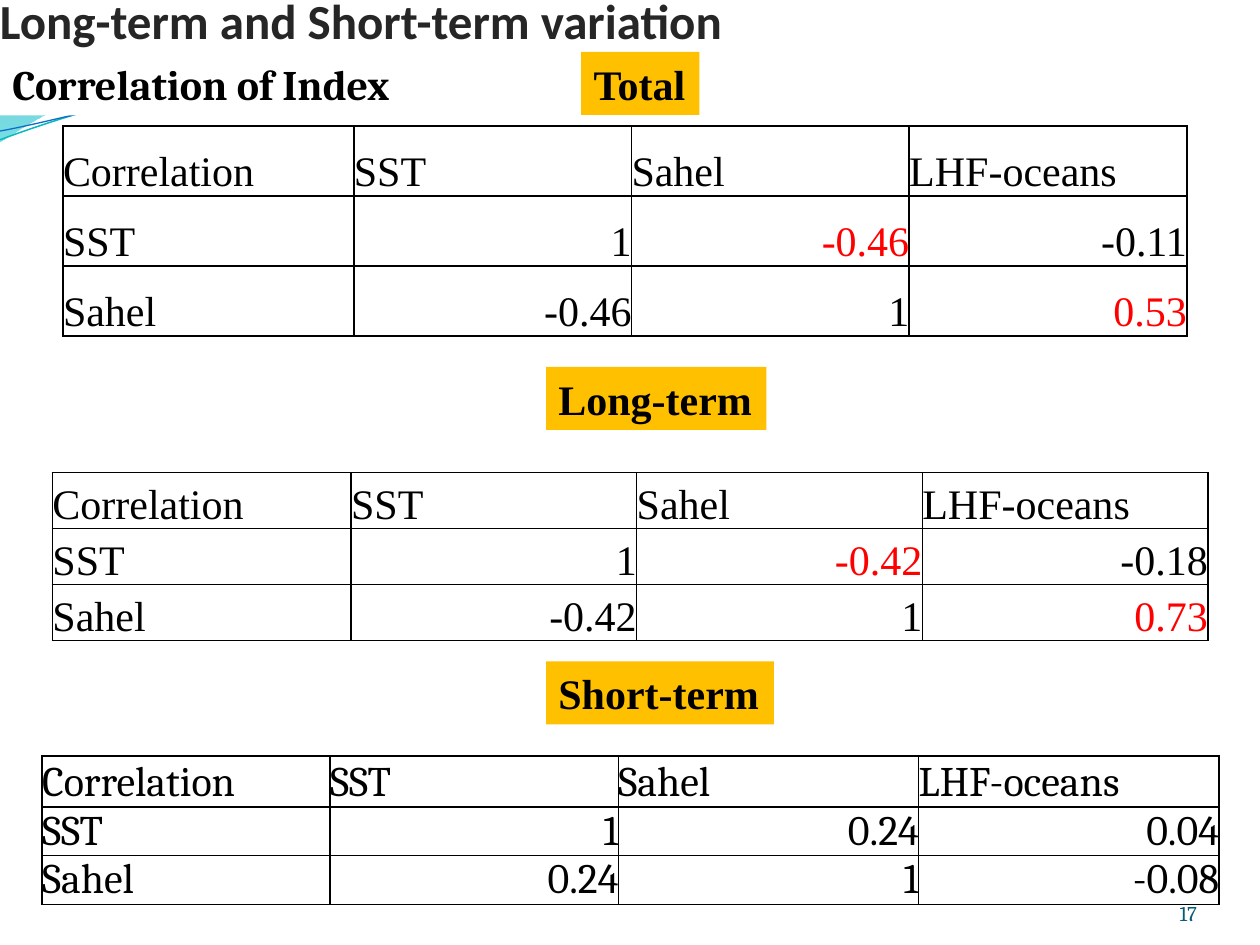
from dataclasses import dataclass

from lxml import etree
from pptx import Presentation
from pptx.dml.color import RGBColor
from pptx.enum.shapes import MSO_SHAPE
from pptx.enum.text import MSO_ANCHOR, MSO_AUTO_SIZE, PP_ALIGN
from pptx.oxml.ns import qn
from pptx.util import Emu, Inches, Pt

RECT = MSO_SHAPE.RECTANGLE
TOP, BOTTOM = MSO_ANCHOR.TOP, MSO_ANCHOR.BOTTOM
LEFT, RIGHT = PP_ALIGN.LEFT, PP_ALIGN.RIGHT
FIT = MSO_AUTO_SIZE.SHAPE_TO_FIT_TEXT

UNIT = Inches(1) / 12  # the slide is a grid of 120 columns by 90 rows
SERIF, TIMES, SANS = "Cambria", "Times New Roman", "Calibri"
BLACK, WHITE, RED, AMBER = "000000", "FFFFFF", "FF0000", "FFC000"
STRONG = 0.4
NAMES = ("Correlation", "SST", "Sahel", "LHF-oceans")


@dataclass
class Matrix:
    col: float
    row: float
    widths: tuple[float, ...]
    heights: tuple[float, ...]
    values: tuple[tuple[str, ...], ...]
    font: str = TIMES
    fill: str | None = None


@dataclass
class Label:
    text: str
    col: float
    row: float
    width: float
    font: str = TIMES
    fill: str = AMBER


@dataclass
class Band:
    """Steps are in inches: a pair is a point, six numbers are a cubic curve."""
    steps: tuple[tuple[float, ...], ...]
    colors: tuple[str, str]
    alphas: tuple[int, int]
    ends: tuple[int, int]


@dataclass
class Wave:
    steps: tuple[tuple[float, ...], ...]
    color: str
    weight: float


MATRICES = (
    Matrix(4, 72, (27.45, 27.45, 28.6, 28.6), (4.87, 4.63, 4.63),
           (("1", "0.24", "0.04"), ("0.24", "1", "-0.08")), SERIF, WHITE),
    Matrix(5, 45, (28.45, 27.2, 27.2, 27.2), (5.33,) * 3,
           (("1", "-0.42", "-0.18"), ("-0.42", "1", "0.73"))),
    Matrix(6, 12, (27.7, 26.45, 26.45, 26.45), (6.67,) * 3,
           (("1", "-0.46", "-0.11"), ("-0.46", "1", "0.53"))),
)
LABELS = (
    Label("Long-term", 52, 34.95, 21),
    Label("Short-term", 52, 63, 21.7),
    Label("Correlation of Index", 0, 5, 39.6, SERIF, WHITE),
    Label("Total", 55.35, 4.95, 11.25),
)
BANDS = (
    Band(((0, 0), (4.4, -0.01), (4.76, 0.17, 6.64, 0.63, 7.58, 0.63),
          (8.53, 0.63, 9.58, 0.26, 10, 0.09), (10.01, 0.36),
          (9.83, 0.44, 8.7, 0.76, 7.46, 0.75), (6.22, 0.75, 3.82, 0.28, 2.57, 0.34),
          (1.29, 0.36, 0.46, 0.83, -0.01, 1.13)), ("0074A1", "00C6CF"), (45, 55), (0, 100)),
    Band(((4.79, -0.01), (5.09, 0.11, 6.82, 0.62, 7.69, 0.65),
          (8.56, 0.69, 9.61, 0.32, 10, 0.21), (10, 0)),
         ("00A1A9", "008BBF"), (30, 45), (0, 80)),
)
WAVES = (
    Wave(((0, 1.11), (0.48, 0.93, 1.58, 0.57, 2.77, 0.52), (3.95, 0.47, 5.93, 0.89, 7.13, 0.8),
          (8.33, 0.71, 9.38, 0.15, 9.98, -0.02)), "0AB8BF", 0.85),
    Wave(((0, 1.04), (0.47, 0.96, 1.64, 0.61, 2.83, 0.56), (4.03, 0.51, 5.97, 0.84, 7.17, 0.75),
          (8.36, 0.67, 9.41, 0.21, 10, 0.06)), "0F6FC6", 0.75),
)


def grid(n: float) -> Emu:
    return Emu(round(n * UNIT))


def rgb(color: str) -> RGBColor:
    return RGBColor.from_string(color)


def add_path(s, steps, close: bool):
    """Freeform through the end of each step, with six-number steps turned into curves."""
    steps = [tuple(Inches(n) for n in step) for step in steps]
    fb = s.shapes.build_freeform(*steps[0], scale=1.0)
    fb.add_line_segments([step[-2:] for step in steps[1:]], close=close)
    sp = fb.convert_to_shape()
    sp.shadow.inherit = False
    for node, step in zip(list(sp._element.iter(qn("a:lnTo"))), steps[1:]):
        if len(step) == 6:
            node.tag = qn("a:cubicBezTo")
            for x, y in reversed((step[:2], step[2:4])):
                pt = etree.Element(qn("a:pt"), x=str(x - sp.left), y=str(y - sp.top))
                node.insert(0, pt)
    return sp


def add_band(s, band: Band) -> None:
    sp = add_path(s, band.steps, True)
    sp.line.fill.background()
    sp.fill.gradient()
    sp.fill.gradient_angle = 270
    for stop, color, end in zip(sp.fill.gradient_stops, band.colors, band.ends):
        stop.color.rgb = rgb(color)
        stop.position = end / 100
    for node, alpha in zip(sp.fill._xPr.iter(qn("a:srgbClr")), band.alphas):
        etree.SubElement(node, qn("a:alpha"), val=str(alpha * 1000))


def add_wave(s, wave: Wave) -> None:
    sp = add_path(s, wave.steps, False)
    sp.fill.background()
    sp.line.color.rgb = rgb(wave.color)
    sp.line.width = Pt(wave.weight)


def write(tf, text: str, *, size: float = 24, font: str = TIMES, color: str = BLACK,
          bold: bool = False, align=LEFT) -> None:
    p = tf.paragraphs[0]
    p.alignment = align
    r = p.add_run()
    r.text = text
    r.font.size, r.font.name, r.font.bold = Pt(size), font, bold
    r.font.color.rgb = rgb(color)


def add_box(s, col: float, row: float, width: float, height: float, fill: str):
    sp = s.shapes.add_shape(RECT, grid(col), grid(row), grid(width), grid(height))
    sp.shadow.inherit = False
    sp.fill.solid()
    sp.fill.fore_color.rgb = rgb(fill)
    sp.line.fill.background()
    return sp


def add_label(s, label: Label) -> None:
    tf = add_box(s, label.col, label.row, label.width, 6, label.fill).text_frame
    tf.word_wrap, tf.auto_size, tf.vertical_anchor = False, FIT, TOP
    write(tf, label.text, font=label.font, bold=True)


def add_title(s, text: str) -> None:
    tf = add_box(s, 0, 0, 120, 10, WHITE).text_frame
    tf.word_wrap, tf.vertical_anchor = True, BOTTOM
    tf.margin_left = tf.margin_right = tf.margin_top = 0
    tf.margin_bottom = grid(5.3)
    write(tf, text, size=28, font=SANS, color="262626", bold=True)


def add_page_number(s, text: str) -> None:
    tf = s.shapes.add_textbox(grid(104), grid(83.4), grid(10), grid(4.8)).text_frame
    tf.word_wrap, tf.vertical_anchor = True, BOTTOM
    tf.margin_left = tf.margin_right = tf.margin_top = tf.margin_bottom = 0
    write(tf, text, size=12, font=SERIF, color="045D75", align=RIGHT)


def style_cell(cell, fill: str | None) -> None:
    cell.margin_left = cell.margin_right = cell.margin_top = cell.margin_bottom = 0
    cell.vertical_anchor = BOTTOM
    tc_pr = cell._tc.get_or_add_tcPr()
    for side in "LRTB":
        ln = etree.SubElement(tc_pr, qn(f"a:ln{side}"), w=str(Pt(1)))
        solid = etree.SubElement(ln, qn("a:solidFill"))
        etree.SubElement(solid, qn("a:srgbClr"), val=BLACK)
    if fill:
        cell.fill.solid()
        cell.fill.fore_color.rgb = rgb(fill)
    else:
        cell.fill.background()


def add_matrix(s, m: Matrix) -> None:
    """Correlation table; strong values above the diagonal are red."""
    rows = [NAMES] + [(name, *vals) for name, vals in zip(NAMES[1:], m.values)]
    table = s.shapes.add_table(len(rows), len(NAMES), grid(m.col), grid(m.row),
                               grid(sum(m.widths)), grid(sum(m.heights))).table
    for column, width in zip(table.columns, m.widths):
        column.width = grid(width)
    for i, (texts, height) in enumerate(zip(rows, m.heights)):
        table.rows[i].height = grid(height)
        for j, text in enumerate(texts):
            cell = table.cell(i, j)
            style_cell(cell, m.fill)
            number = i > 0 and j > 0
            strong = number and j > i and abs(float(text)) > STRONG
            write(cell.text_frame, text, font=m.font, color=RED if strong else BLACK,
                  align=RIGHT if number else LEFT)


def main() -> None:
    prs = Presentation()
    prs.slide_width, prs.slide_height = grid(120), grid(90)
    s = prs.slides.add_slide(prs.slide_layouts[6])
    for band in BANDS:
        add_band(s, band)
    for wave in WAVES:
        add_wave(s, wave)
    for matrix in MATRICES:
        add_matrix(s, matrix)
    add_title(s, "Long-term and Short-term variation")
    for label in LABELS:
        add_label(s, label)
    add_page_number(s, "17")
    prs.save("out.pptx")


if __name__ == "__main__":
    main()
